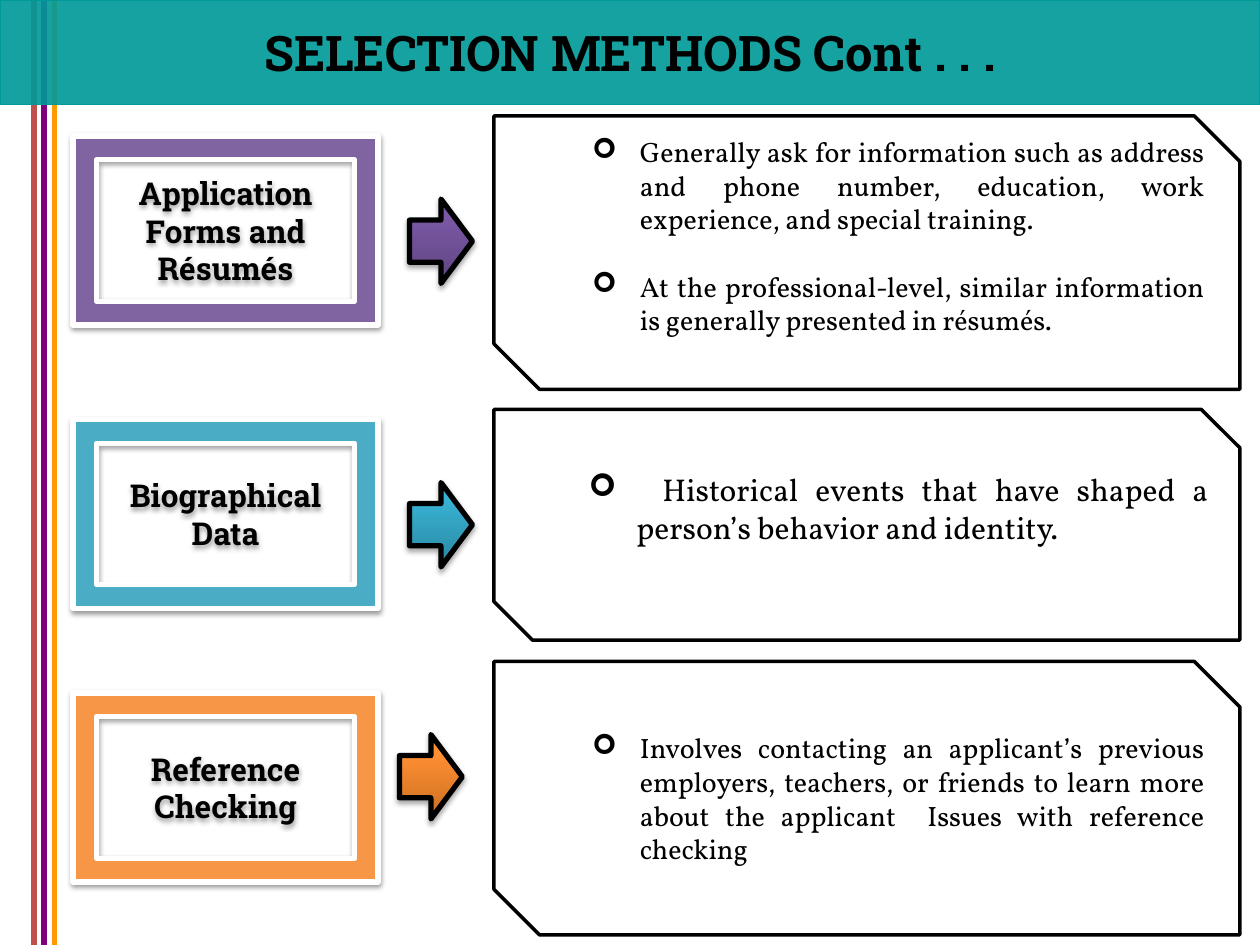
from lxml.etree import SubElement
from pptx import Presentation
from pptx.dml.color import RGBColor
from pptx.enum.shapes import MSO_CONNECTOR, MSO_SHAPE
from pptx.enum.text import MSO_ANCHOR, MSO_AUTO_SIZE, PP_ALIGN
from pptx.oxml.ns import qn
from pptx.util import Inches, Pt

THEME = {
    "heading_font": "Roboto Slab", "body_font": "Vollkorn",
    "black": "000000", "white": "FFFFFF", "band": "009999",
    "band_alpha": 91, "title_size": 28, "label_size": 18,
    "stripe_width": 3, "frame_width": 3, "arrow_width": 3, "box_width": 2,
}
TITLE = "SELECTION METHODS Cont . . ."
STRIPES = [(0.27, 0, "C0504D"), (0.43, 0, "FF9900"), (0.35, -0.03, "800080")]
METHODS = [
    {
        "label": ["Application Forms and Résumés"],
        "color": "8064A2", "gradient": ["5F4480", "7B58A6", "7C57A8"],
        "box": (0.92, 2.17), "frame_top": 1.08, "arrow": (3.25, 1.58),
        "size": 16, "space_below": 0.27,
        "points": [
            "Generally ask for information such as address and phone number, "
            "education, work experience, and special training. ",
            "At the professional-level, similar information is generally "
            "presented in résumés. ",
        ],
    },
    {
        "label": ["Biographical", "Data"],
        "color": "4BACC6", "gradient": ["2A88A2", "37B1D2", "34B4D6"],
        "box": (3.25, 1.83), "frame_top": 3.33, "arrow": (3.25, 3.83),
        "size": 18, "space_below": 0.27,
        "points": [
            " \tHistorical events that have shaped a person’s behavior and identity.",
        ],
    },
    {
        "label": ["Reference Checking"],
        "color": "F79646", "gradient": ["CC6E20", "FF9034", "FF9136"],
        "box": (5.25, 2.17), "frame_top": 5.5, "arrow": (3.17, 5.83),
        "size": 16, "space_below": 0,
        "points": [
            "Involves contacting an applicant’s previous employers, teachers, or "
            "friends to learn more about the applicant  Issues with reference checking",
        ],
    },
]
BOX_LEFT, BOX_WIDTH = 3.92, 5.92
FRAME_LEFT, FRAME_WIDTH, FRAME_HEIGHT = 0.58, 2.42, 1.5
ARROW_WIDTH, ARROW_HEIGHT = 0.5, 0.67
BULLET_MARGIN, BULLET_INDENT = 0.88, -0.38
POINT_GAP = 19.2
GRADIENT_STOPS = [0, 80, 100]


def add_element(parent, tag, **attributes):
    return SubElement(parent, qn(tag), {k: str(v) for k, v in attributes.items()})


def add_color(parent, color, alpha=None):
    element = add_element(parent, "a:srgbClr", val=color)
    if alpha is not None:
        add_element(element, "a:alpha", val=alpha * 1000)


def paint(shape, fill, line, width):
    shape.fill.solid()
    shape.fill.fore_color.rgb = RGBColor.from_string(fill)
    shape.line.color.rgb = RGBColor.from_string(line)
    shape.line.width = Pt(width)
    shape.shadow.inherit = False


def add_shape(slide, kind, position, fill, line, width):
    shape = slide.shapes.add_shape(kind, *map(Inches, position))
    paint(shape, fill, line, width)
    return shape


def add_shadow(shape, alpha, distance):
    effects = shape._element.spPr.find(qn("a:effectLst"))
    shadow = add_element(effects, "a:outerShdw", blurRad=Pt(3.1), dist=Pt(distance),
                         dir=90 * 60000, rotWithShape=0)
    add_color(shadow, THEME["black"], alpha)


def set_gradient(shape, colors):
    solid = shape._element.spPr.find(qn("a:solidFill"))
    gradient = add_element(shape._element.spPr, "a:gradFill", rotWithShape=1)
    stops = add_element(gradient, "a:gsLst")
    for position, color in zip(GRADIENT_STOPS, colors):
        add_color(add_element(stops, "a:gs", pos=position * 1000), color)
    add_element(gradient, "a:lin", ang=270 * 60000, scaled=0)
    solid.getparent().replace(solid, gradient)


def write(shape, texts, font, size, bold, alignment):
    frame = shape.text_frame
    frame.word_wrap = True
    frame.vertical_anchor = MSO_ANCHOR.MIDDLE
    for index, text in enumerate(texts):
        paragraph = frame.add_paragraph() if index else frame.paragraphs[0]
        paragraph.alignment = alignment
        run = paragraph.add_run()
        run.text = text
        run.font.name = font
        run.font.size = Pt(size)
        run.font.bold = bold
        run.font.color.rgb = RGBColor.from_string(THEME["black"])
    return frame


def add_stripe(slide, x, top, color):
    stripe = slide.shapes.add_connector(
        MSO_CONNECTOR.STRAIGHT, Inches(x), Inches(top), Inches(x), Inches(7.5))
    stripe.line.color.rgb = RGBColor.from_string(color)
    stripe.line.width = Pt(THEME["stripe_width"])
    add_element(stripe._element.spPr, "a:effectLst")
    return stripe


def format_title(slide, last_stripe):
    title = slide.shapes.title
    title.left, title.top, title.width, title.height = map(Inches, (0, 0, 10, 0.83))
    paint(title, THEME["band"], THEME["band"], 0.75)
    color = title._element.spPr.find(qn("a:solidFill"))[0]
    add_element(color, "a:alpha", val=THEME["band_alpha"] * 1000)
    frame = write(title, [TITLE], THEME["heading_font"], THEME["title_size"], True,
                  PP_ALIGN.CENTER)
    frame.word_wrap = False
    frame.auto_size = MSO_AUTO_SIZE.NONE
    last_stripe._element.addnext(title._element)


def add_points(slide, method):
    top, height = method["box"]
    box = add_shape(slide, MSO_SHAPE.SNIP_2_DIAG_RECTANGLE,
                    (BOX_LEFT, top, BOX_WIDTH, height),
                    THEME["white"], THEME["black"], THEME["box_width"])
    frame = write(box, method["points"], THEME["body_font"], method["size"], False,
                  PP_ALIGN.JUSTIFY)
    frame.margin_bottom = Inches(0.05 + method["space_below"])
    for index, paragraph in enumerate(frame.paragraphs):
        paragraph.level = 1
        paragraph.space_before = Pt(POINT_GAP if index else 0)
        properties = paragraph._p.get_or_add_pPr()
        properties.set("marL", str(Inches(BULLET_MARGIN)))
        properties.set("indent", str(Inches(BULLET_INDENT)))
        add_element(properties, "a:buFont", typeface="Wingdings")
        add_element(properties, "a:buChar", char="➢")


def add_method(slide, method):
    add_points(slide, method)
    frame = add_shape(slide, MSO_SHAPE.FRAME,
                      (FRAME_LEFT, method["frame_top"], FRAME_WIDTH, FRAME_HEIGHT),
                      method["color"], THEME["white"], THEME["frame_width"])
    add_shadow(frame, 38, 1.6)
    write(frame, method["label"], THEME["heading_font"], THEME["label_size"], True,
          PP_ALIGN.CENTER)
    arrow = add_shape(slide, MSO_SHAPE.RIGHT_ARROW,
                      (*method["arrow"], ARROW_WIDTH, ARROW_HEIGHT),
                      method["color"], THEME["black"], THEME["arrow_width"])
    set_gradient(arrow, method["gradient"])
    add_shadow(arrow, 35, 1.8)


def main():
    presentation = Presentation()
    presentation.slide_width, presentation.slide_height = Inches(10), Inches(7.5)
    slide = presentation.slides.add_slide(presentation.slide_layouts[5])
    stripes = [add_stripe(slide, *stripe) for stripe in STRIPES]
    format_title(slide, stripes[-1])
    for method in METHODS:
        add_method(slide, method)
    presentation.save("out.pptx")


if __name__ == "__main__":
    main()
